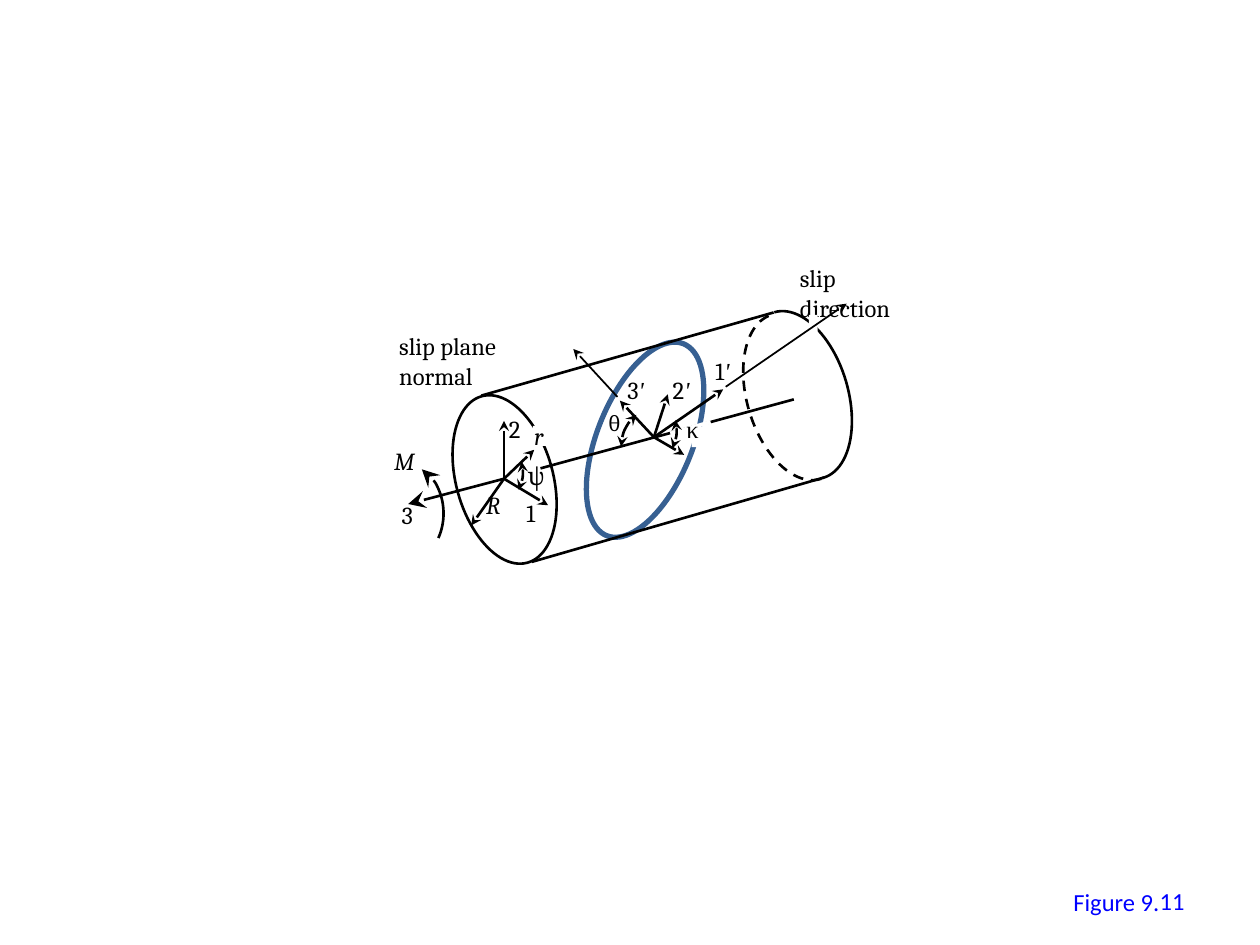
"""Build the slide of a twisted single-crystal cylinder with its slip system."""
import pptx
import pptx.dml.color
import pptx.enum.dml
import pptx.enum.shapes
import pptx.enum.text
import pptx.oxml.ns
import pptx.util
from lxml import etree

RGBColor = pptx.dml.color.RGBColor
BLACK = RGBColor(0x00, 0x00, 0x00)
WHITE = RGBColor(0xFF, 0xFF, 0xFF)
SLIP_BLUE = RGBColor(0x37, 0x60, 0x92)
CAPTION_BLUE = RGBColor(0x00, 0x00, 0xFF)
SHAPES = pptx.enum.shapes.MSO_SHAPE
CM_PER_INCH = 2.54
ADJUSTMENT_PER_DEGREE = 0.6

SLIP_PLANE = (4.74, 2.67, 0.76, 1.64)
FRONT_FACE = (3.62, 3.12, 0.77, 1.37)
AXIS = ((6.3, 3.17), (4.28, 3.72))
AXIS_GAPS = [((5.32, 3.44), (5.64, 3.35)), ((4.08, 3.78), (4.29, 3.72))]
CYLINDER_SIDES = [((3.82, 3.14), (6.14, 2.48)), ((4.22, 4.46), (6.54, 3.79))]
BACK_ARCS = [
    ((5.95, 2.45, 0.78, 1.37), (270, 90.74), False),
    ((5.93, 2.47, 0.78, 1.36), (89.46, 269.98), True),
]
MOMENT_ARC = ((2.93, 3.69, 0.59, 0.77), (289.39, 37.57))
ANGLE_SIZE = 0.65
ANGLE_ARCS = [
    ((4.93, 3.22), (309.04, 0)),
    ((4.72, 3.09), (153.81, 194.19)),
    ((3.5, 3.42), (153.81, 194.19)),
]
FACE_CENTRE = (4, 3.8)
PLANE_CENTRE = (5.19, 3.47)
ARROW_TIPS = [
    (FACE_CENTRE, [(3.74, 4.17), (4, 3.34), (4.35, 4.01), (4.24, 3.57)]),
    (PLANE_CENTRE, [(5.43, 3.61), (5.3, 3.13), (4.92, 3.18), (5.74, 3.09)]),
]
AXIS_TIP = (3.24, 4)
NORMAL_ARROW = ((4.9, 3.15), (4.55, 2.77))
DIRECTION_ARROW = ((5.76, 3.07), (6.72, 2.41))
LABEL_GAPS = [(4.23, 3.38, 0.13, 0.16), (5.49, 3.39, 0.13, 0.16)]
DIRECTION_GAP = (6.42, 2.5, 0.07, 0.14)

UPRIGHT, ITALIC = ("Cambria", False), ("Cambria", True)
PRIME = ("'", ("Times New Roman", True))
LABELS = [
    ((3.03, 3.49, 0.42, 0.34), [("M", ITALIC)], 14),
    ((3.09, 3.92, 0.3, 0.34), [("3", UPRIGHT)], 14),
    ((5.58, 2.78, 0.39, 0.34), [("1", UPRIGHT), PRIME], 14),
    ((3.76, 3.84, 0.37, 0.34), [("R", ITALIC)], 14),
    ((4.08, 3.9, 0.3, 0.34), [("1", UPRIGHT)], 14),
    ((3.94, 3.24, 0.3, 0.34), [("2", UPRIGHT)], 14),
    ((5.24, 2.93, 0.39, 0.34), [("2", UPRIGHT), PRIME], 14),
    ((4.88, 2.93, 0.39, 0.34), [("3", UPRIGHT), PRIME], 14),
    ((4.14, 3.29, 0.33, 0.34), [("r", ITALIC)], 14),
    ((4.73, 3.21, 0.33, 0.3), [("θ", UPRIGHT)], 12),
    ((5.35, 3.24, 0.3, 0.34), [("κ", ("Times New Roman", False))], 14),
    ((4.09, 3.61, 0.34, 0.34), [("ψ", UPRIGHT)], 14),
]
WRAPPED_LABELS = [
    ((6.25, 2.04, 1.23, 0.34), "slip direction"),
    ((3.07, 2.58, 1.57, 0.34), "slip plane normal"),
]
CAPTION = ((8.42, 6.99, 0.89, 0.34), "Figure 9.")
FIGURE_NUMBER = ((7.17, 6.95, 2.33, 0.4), "11")


def lengths(inches):
    return [pptx.util.Cm(value * CM_PER_INCH) for value in inches]


def add_arrowheads(shape, ends, size="med"):
    outline = shape.line._get_or_add_ln()
    for end in ends:
        etree.SubElement(outline, pptx.oxml.ns.qn(f"a:{end}"),
                         type="stealth", w=size, len=size)


def add_line(slide, start, finish, color=BLACK, width=1.5, arrow=None):
    line = slide.shapes.add_connector(
        pptx.enum.shapes.MSO_CONNECTOR.STRAIGHT, *lengths(start + finish))
    line.line.color.rgb = color
    line.line.width = pptx.util.Pt(width)
    if arrow:
        add_arrowheads(line, ["tailEnd"], arrow)
    etree.SubElement(line._element.spPr, pptx.oxml.ns.qn("a:effectLst"))


def add_outline(slide, kind, box, rotation=0, color=BLACK, width=1.5):
    shape = slide.shapes.add_shape(kind, *lengths(box))
    shape.shadow.inherit = False
    shape.fill.background()
    shape.line.color.rgb = color
    shape.line.width = pptx.util.Pt(width)
    shape.rotation = rotation
    return shape


def add_arc(slide, box, angles, rotation=0):
    arc = add_outline(slide, SHAPES.ARC, box, rotation)
    for index, angle in enumerate(angles):
        arc.adjustments[index] = angle * ADJUSTMENT_PER_DEGREE
    return arc


def add_gap(slide, box):
    gap = slide.shapes.add_shape(SHAPES.RECTANGLE, *lengths(box))
    gap.shadow.inherit = False
    gap.fill.solid()
    gap.fill.fore_color.rgb = WHITE
    gap.line.fill.background()


def add_text(slide, box, runs, size=14, color=BLACK, wrap=False):
    label = slide.shapes.add_textbox(*lengths(box))
    frame = label.text_frame
    frame.word_wrap = wrap
    for text, (font, italic) in runs:
        run = frame.paragraphs[0].add_run()
        run.text = text
        run.font.name = font
        run.font.italic = italic
        run.font.size = pptx.util.Pt(size)
        run.font.color.rgb = color
    return frame


def draw_cylinder(slide):
    add_outline(slide, SHAPES.OVAL, SLIP_PLANE, 21.8, SLIP_BLUE, 3)
    add_line(slide, *AXIS)
    add_outline(slide, SHAPES.OVAL, FRONT_FACE, 344.7)
    for gap in AXIS_GAPS:
        add_line(slide, *gap, color=WHITE, width=2.25)
    for side in CYLINDER_SIDES:
        add_line(slide, *side)
    for box, angles, dashed in BACK_ARCS:
        arc = add_arc(slide, box, angles, 343.5)
        if dashed:
            arc.line.dash_style = pptx.enum.dml.MSO_LINE.DASH


def draw_arrows(slide):
    add_arrowheads(add_arc(slide, *MOMENT_ARC), ["headEnd"], "lg")
    for centre, tips in ARROW_TIPS:
        for tip in tips:
            add_line(slide, centre, tip, arrow="med")
    add_line(slide, FACE_CENTRE, AXIS_TIP, arrow="lg")
    add_line(slide, *NORMAL_ARROW, width=1, arrow="med")
    for corner, angles in ANGLE_ARCS:
        arc = add_arc(slide, corner + (ANGLE_SIZE, ANGLE_SIZE), angles)
        arc._element.spPr.xfrm.set("flipH", "1")
        add_arrowheads(arc, ["headEnd", "tailEnd"])


def draw_labels(slide):
    for box in LABEL_GAPS:
        add_gap(slide, box)
    for box, runs, size in LABELS:
        add_text(slide, box, runs, size)
    for box, text in WRAPPED_LABELS:
        add_text(slide, box, [(text, UPRIGHT)], wrap=True)
    add_gap(slide, DIRECTION_GAP)
    add_line(slide, *DIRECTION_ARROW, width=1, arrow="med")


def draw_caption(slide):
    calibri = ("Calibri", False)
    box, text = CAPTION
    add_text(slide, box, [(text, calibri)], color=CAPTION_BLUE)
    box, text = FIGURE_NUMBER
    frame = add_text(slide, box, [(text, calibri)], color=CAPTION_BLUE, wrap=True)
    frame.vertical_anchor = pptx.enum.text.MSO_ANCHOR.MIDDLE
    frame.paragraphs[0].alignment = pptx.enum.text.PP_ALIGN.RIGHT


def main():
    presentation = pptx.Presentation()
    presentation.slide_width, presentation.slide_height = lengths((10, 7.5))
    slide = presentation.slides.add_slide(presentation.slide_layouts[6])
    draw_cylinder(slide)
    draw_arrows(slide)
    draw_labels(slide)
    draw_caption(slide)
    presentation.save("out.pptx")


if __name__ == "__main__":
    main()
